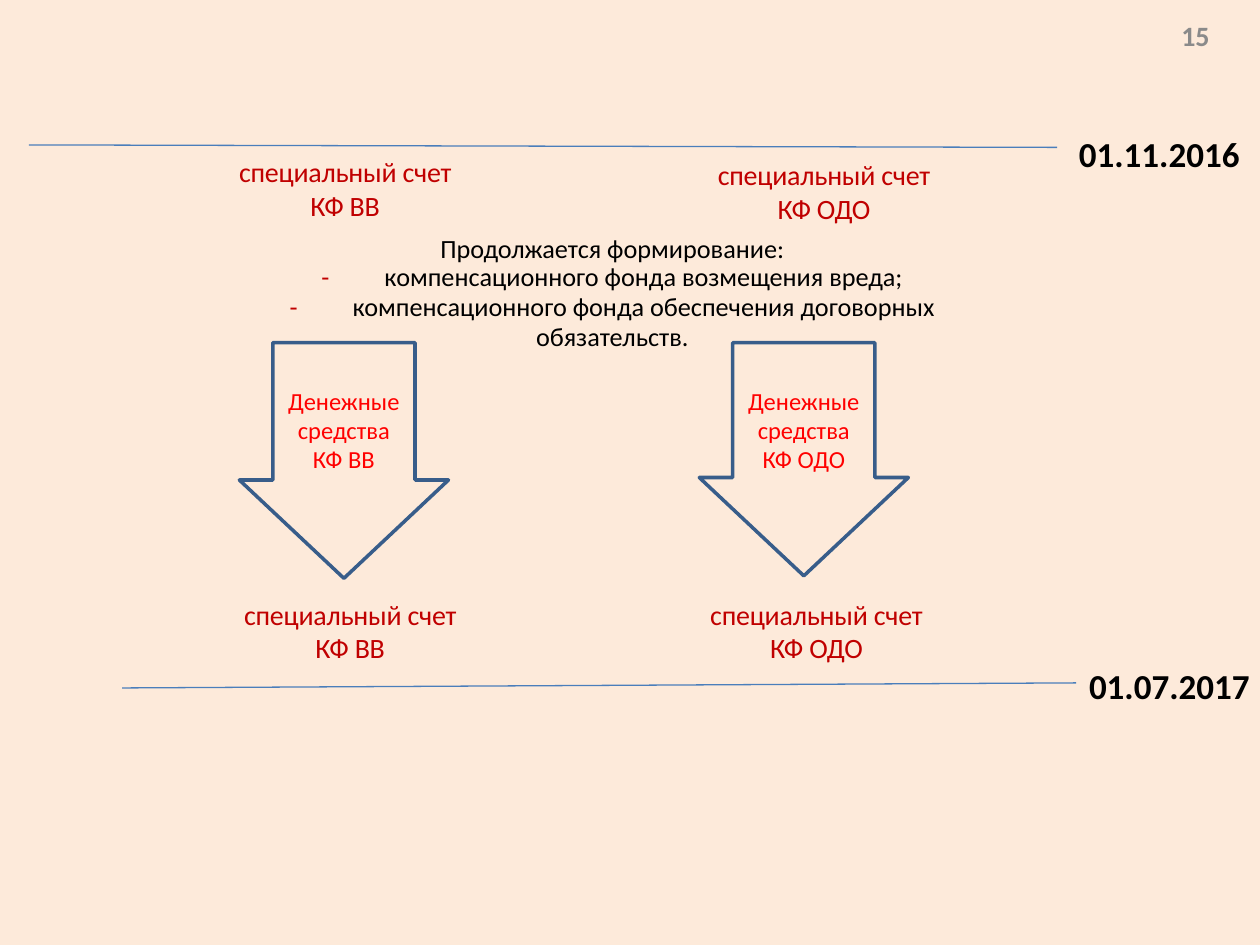
"""Build the slide on compensation fund accounts between two dates."""
import pptx
import pptx.util
import pptx.dml.color
import pptx.enum.shapes
import pptx.enum.text
import pptx.oxml.ns
import lxml.etree

Inches, Pt = pptx.util.Inches, pptx.util.Pt
ALIGN = pptx.enum.text.PP_ALIGN
FONT = "Calibri"
PAPER, BLACK, GREY = "FDEADA", "000000", "8A8A8A"
DARK_RED, RED, RULE, OUTLINE = "C00000", "FF0000", "4A7EBB", "385D8A"

PAGE_NUMBER = "15"
TIMELINE = [
    {"date": "01.11.2016", "line": (0.23, 1.15, 8.39, 1.17), "right": 9.84, "top": 1.05},
    {"date": "01.07.2017", "line": (0.97, 5.46, 8.54, 5.42), "right": 9.92, "top": 5.27},
]
FUNDS = [
    {"name": "КФ ВВ", "arrow": (1.9, 1.87), "accounts": [(1.87, 1.23), (1.91, 4.74)]},
    {"name": "КФ ОДО", "arrow": (5.55, 1.85), "accounts": [(5.67, 1.25), (5.61, 4.74)]},
]
ACCOUNT, MONEY = "специальный счет", "Денежные средства"
BODY = [
    ("", "Продолжается формирование:", 17.1),
    ("-\t", "компенсационного фонда возмещения вреда;", 16),
    ("-\t", "компенсационного фонда обеспечения договорных обязательств.", 17),
]
ARROW_TOP, ARROW_WIDTH = 2.72, 1.66
SHAFT_SHARE, HEAD_SHARE = 0.68, 0.47


def color(value):
    return pptx.dml.color.RGBColor.from_string(value)


def set_margins(frame, side=0, top=0):
    frame.margin_left = frame.margin_right = Inches(side)
    frame.margin_top, frame.margin_bottom = Inches(top), 0
    frame.word_wrap = True
    frame.vertical_anchor = pptx.enum.text.MSO_ANCHOR.TOP


def format_runs(paragraph, size, value, bold=False, align=ALIGN.CENTER):
    paragraph.alignment = align
    for run in paragraph.runs:
        run.font.name, run.font.size, run.font.bold = FONT, Pt(size), bold
        run.font.color.rgb = color(value)


def add_text(slide, text, box, size, value, bold=False, align=ALIGN.CENTER):
    frame = slide.shapes.add_textbox(*map(Inches, box)).text_frame
    set_margins(frame)
    frame.text = text
    format_runs(frame.paragraphs[0], size, value, bold, align)
    return frame.paragraphs[0]


def add_rule(slide, ends):
    connector = slide.shapes.add_connector(
        pptx.enum.shapes.MSO_CONNECTOR.STRAIGHT, *map(Inches, ends))
    connector.line.color.rgb, connector.line.width = color(RULE), Pt(0.75)
    lxml.etree.SubElement(connector._element.spPr, pptx.oxml.ns.qn("a:effectLst"))


def add_arrow(slide, name, left, height):
    arrow = slide.shapes.add_shape(
        pptx.enum.shapes.MSO_SHAPE.DOWN_ARROW,
        *map(Inches, (left, ARROW_TOP, ARROW_WIDTH, height)))
    arrow.adjustments[0], arrow.adjustments[1] = SHAFT_SHARE, HEAD_SHARE
    arrow.shadow.inherit = False
    arrow.fill.background()
    arrow.line.color.rgb, arrow.line.width = color(OUTLINE), Pt(2)
    set_margins(arrow.text_frame, side=0.1, top=0.34)
    arrow.text_frame.text = f"{MONEY} {name}"
    format_runs(arrow.text_frame.paragraphs[0], 14, RED)


def fill_body(body):
    body.left, body.top, body.width, body.height = map(Inches, (1.75, 1.86, 6.22, 0.68))
    frame = body.text_frame
    set_margins(frame)
    frame.auto_size = pptx.enum.text.MSO_AUTO_SIZE.NONE
    frame.text = "\n".join(text for _, text, _ in BODY)
    for paragraph, (dash, text, spacing) in zip(frame.paragraphs, BODY):
        paragraph.text = dash
        paragraph.add_run().text = text
        format_runs(paragraph, 15, BLACK)
        paragraph.line_spacing, paragraph.space_before = Pt(spacing), Pt(0)
        properties = paragraph._p.get_or_add_pPr()
        properties.set("marL", "0")
        properties.set("indent", "0")
        lxml.etree.SubElement(properties, pptx.oxml.ns.qn("a:buNone"))
        if dash:
            paragraph.runs[0].font.color.rgb = color(DARK_RED)
            tabs = lxml.etree.SubElement(properties, pptx.oxml.ns.qn("a:tabLst"))
            lxml.etree.SubElement(tabs, pptx.oxml.ns.qn("a:tab"),
                                  pos=str(Inches(0.31)), algn="l")


def main():
    presentation = pptx.Presentation()
    presentation.slide_width, presentation.slide_height = Inches(10), Inches(7.5)
    slide = presentation.slides.add_slide(presentation.slide_layouts[1])
    slide.background.fill.solid()
    slide.background.fill.fore_color.rgb = color(PAPER)
    title = slide.shapes.title._element
    title.getparent().remove(title)
    fill_body(slide.placeholders[1])
    add_text(slide, PAGE_NUMBER, (9.3, 0.15, 0.3, 0.27), 16, GREY, True, ALIGN.RIGHT)
    for event in TIMELINE:
        add_rule(slide, event["line"])
        add_text(slide, event["date"], (event["right"] - 1.4, event["top"], 1.4, 0.34),
                 20, BLACK, True, ALIGN.RIGHT)
    for fund in FUNDS:
        add_arrow(slide, fund["name"], *fund["arrow"])
        for left, top in fund["accounts"]:
            paragraph = add_text(slide, f"{ACCOUNT} {fund['name']}",
                                 (left - 0.05, top, 1.84, 0.52), 16, DARK_RED)
            paragraph.runs[0].font._element.set("spc", "-10")
    presentation.save("out.pptx")


if __name__ == "__main__":
    main()
